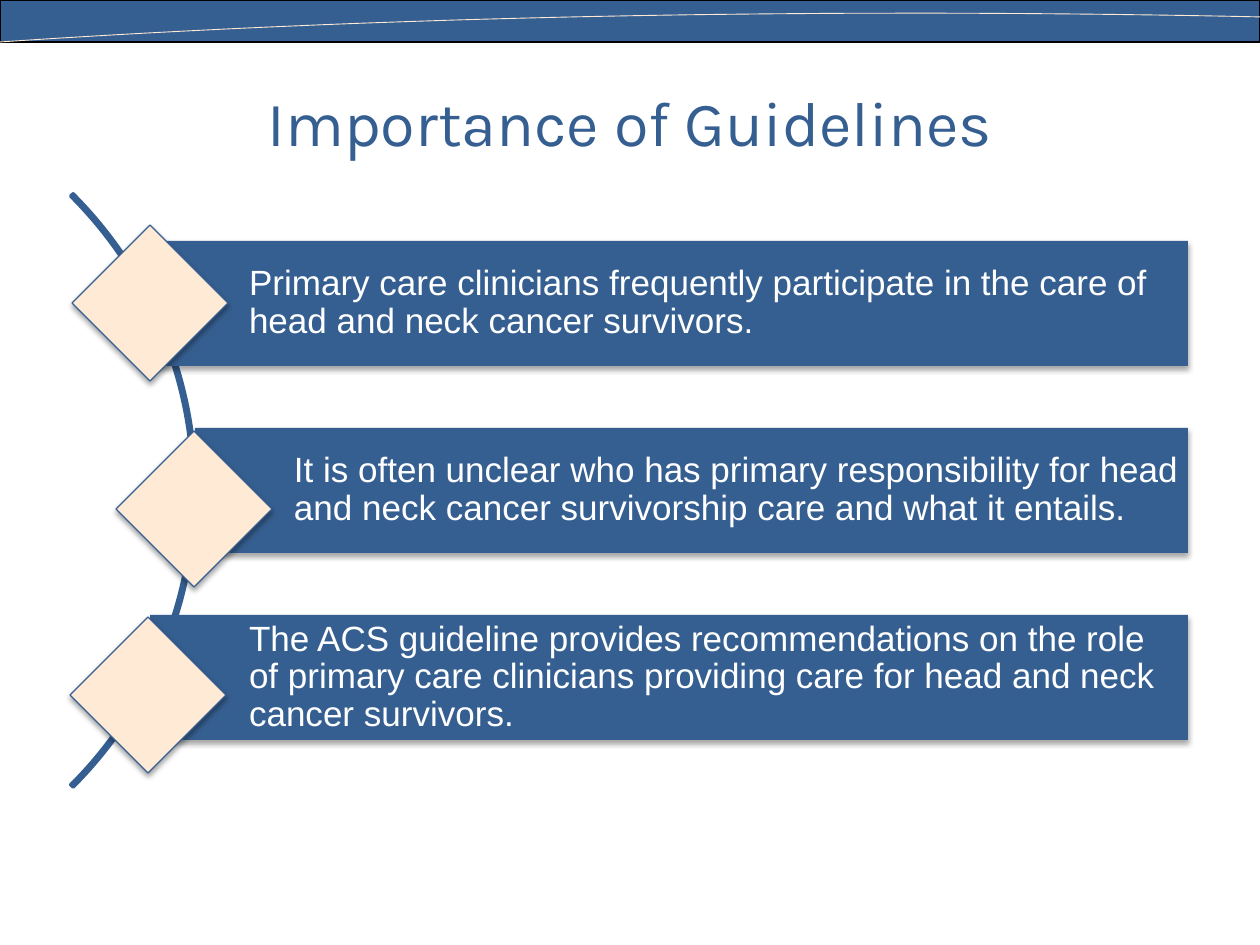
"""Build the slide on the importance of guidelines."""
import pptx
import pptx.util
import pptx.dml.color
import pptx.enum.shapes
import pptx.enum.text
import lxml.etree

RGB = pptx.dml.color.RGBColor
SHAPE = pptx.enum.shapes.MSO_SHAPE
ALIGN = pptx.enum.text.PP_ALIGN
MIDDLE = pptx.enum.text.MSO_ANCHOR.MIDDLE

BLUE = RGB(0x36, 0x5F, 0x91)
CREAM = RGB(0xFF, 0xEA, 0xD5)
BLACK = RGB(0, 0, 0)
WHITE = RGB(0xFF, 0xFF, 0xFF)

TITLE = "Importance of Guidelines"
ITEMS = [
    ("Primary care clinicians frequently participate in the care of head and neck "
     "cancer survivors.", 150, (72, 225)),
    ("It is often unclear who has primary responsibility for head and neck cancer "
     "survivorship care and what it entails.", 195, (116, 431)),
    ("The ACS guideline provides recommendations on the role of primary care clinicians "
     "providing care for head and neck cancer survivors.", 150, (70, 617)),
]
WIDE, HIGH, BAND = 1260, 945, 42
TOP, STEP, TALL, RIGHT, GEM = 241, 187, 125, 1188, 156
SWEEP = [(1260, 17), (937, 10), (478, 10), (0, 42)]
PARTS = 48
NS = "http://schemas.openxmlformats.org/drawingml/2006/main"


def px(num):
    return pptx.util.Emu(round(num * 914400 / 126))


def paint(shape, fill, line=None, width=0.75):
    shape.shadow.inherit = False
    if fill is None:
        shape.fill.background()
    else:
        shape.fill.solid()
        shape.fill.fore_color.rgb = fill
    if line is None:
        shape.line.fill.background()
    else:
        shape.line.color.rgb = line
        shape.line.width = pptx.util.Pt(width)


def add(kind, left, top, wide, high, *style):
    shape = slide.shapes.add_shape(kind, px(left), px(top), px(wide), px(high))
    paint(shape, *style)
    return shape


def shade(shape):
    effects = shape.element.spPr.find(f"{{{NS}}}effectLst")
    effects.append(lxml.etree.fromstring(
        f'<a:outerShdw xmlns:a="{NS}" blurRad="40000" dist="23000" dir="5400000" '
        'rotWithShape="0"><a:srgbClr val="000000"><a:alpha val="35000"/>'
        '</a:srgbClr></a:outerShdw>'))


def write(shape, text, font, size, color, align):
    frame = shape.text_frame
    frame.word_wrap = True
    frame.vertical_anchor = MIDDLE
    frame.text = text
    para = frame.paragraphs[0]
    para.alignment = align
    run = para.runs[0].font
    run.name, run.size, run.color.rgb = font, pptx.util.Pt(size), color
    return frame


def curve(time):
    rest = 1 - time
    parts = (rest ** 3, 3 * rest ** 2 * time, 3 * rest * time ** 2, time ** 3)
    return tuple(px(sum(p * point[axis] for p, point in zip(parts, SWEEP)))
                 for axis in (0, 1))


deck = pptx.Presentation()
deck.slide_width, deck.slide_height = px(WIDE), px(HIGH)
slide = deck.slides.add_slide(deck.slide_layouts[6])

add(SHAPE.RECTANGLE, 0, 0, WIDE, BAND, BLUE, BLACK)
points = [curve(i / PARTS) for i in range(PARTS + 1)]
pen = slide.shapes.build_freeform(*points[0])
pen.add_line_segments(points[1:], close=False)
paint(pen.convert_to_shape(), None, CREAM, 0.5)

head = slide.shapes.add_textbox(px(63), px(BAND), px(1134), px(158))
write(head, TITLE, "Karla", 36, BLUE, ALIGN.CENTER)

arc = add(SHAPE.BLOCK_ARC, -643, 71, 839, 839, BLUE, BLUE, 2)
for i, value in enumerate((189, 27, 0.004)):
    arc.adjustments[i] = value

for row, (text, left, spot) in enumerate(ITEMS):
    bar = add(SHAPE.RECTANGLE, left, TOP + row * STEP, RIGHT - left, TALL, BLUE)
    shade(bar)
    frame = write(bar, text, "Arial", 20, WHITE, ALIGN.LEFT)
    frame.margin_left = px(99)
    frame.margin_right = frame.margin_top = frame.margin_bottom = px(8)
    frame.paragraphs[0].line_spacing = 0.9
    shade(add(SHAPE.DIAMOND, *spot, GEM, GEM, CREAM, BLUE))

deck.save("out.pptx")
